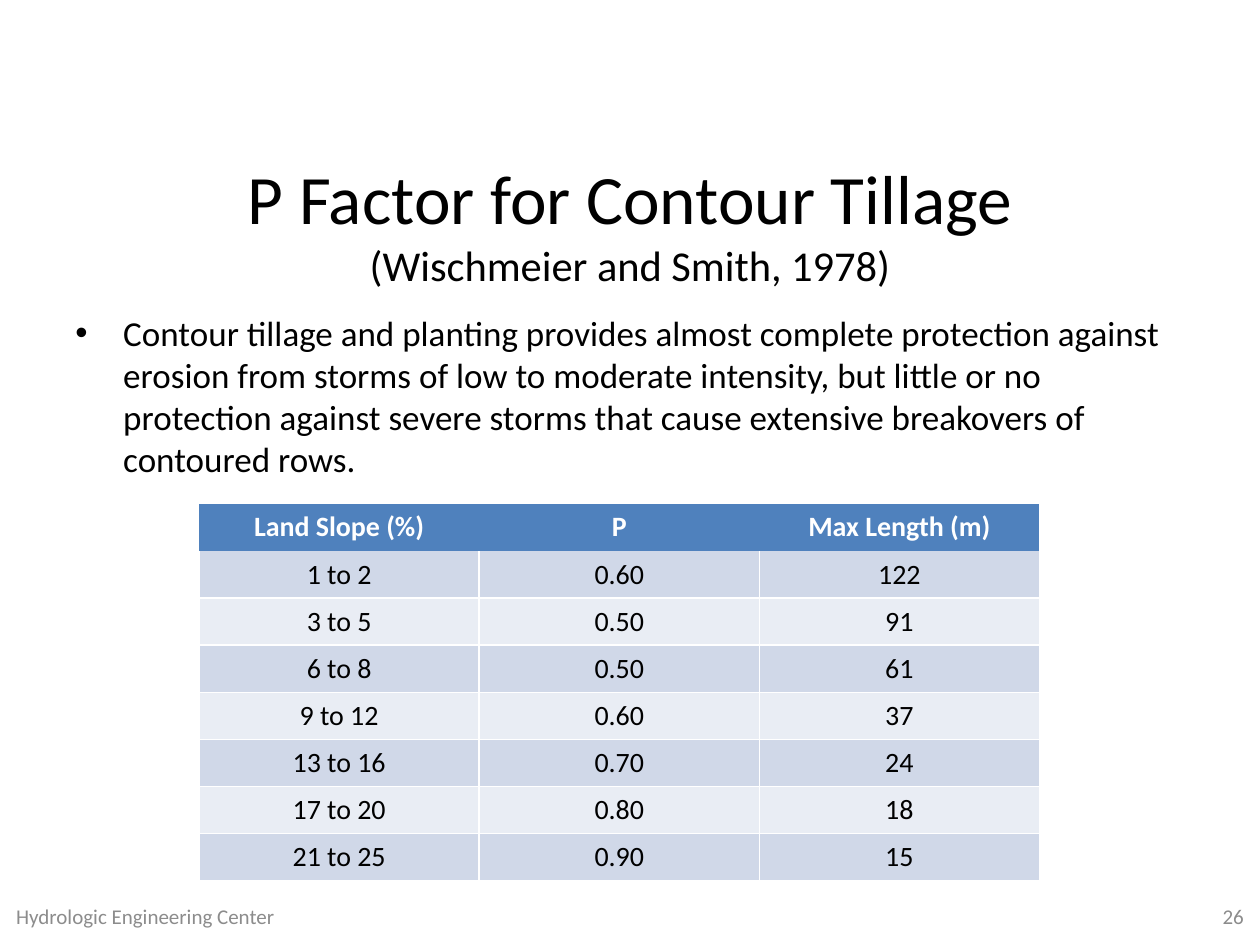
import dataclasses

import lxml.etree
import pptx
import pptx.dml.color
import pptx.enum.text
import pptx.oxml.ns
import pptx.util

ALIGN = pptx.enum.text.PP_ALIGN
ANCHOR = pptx.enum.text.MSO_ANCHOR
WIDTH, HEIGHT = 10, 7.5
MARGIN = 0.05 * WIDTH
FOOTER_EDGE, FOOTER_TOP, FOOTER_HEIGHT = 0.03, 7.07, 0.4
TABLE_LEFT, TABLE_TOP, TABLE_WIDTH, TABLE_HEIGHT = 1.58, 4, 6.67, 2.99

HEADER = ("Land Slope (%)", "P", "Max Length (m)")
FACTORS = (
    ("1 to 2", "0.60", "122"),
    ("3 to 5", "0.50", "91"),
    ("6 to 8", "0.50", "61"),
    ("9 to 12", "0.60", "37"),
    ("13 to 16", "0.70", "24"),
    ("17 to 20", "0.80", "18"),
    ("21 to 25", "0.90", "15"),
)
ADVICE = (
    "Contour tillage and planting provides almost complete protection against "
    "erosion from storms of low to moderate intensity, but little or no "
    "protection against severe storms that cause extensive breakovers of "
    "contoured rows."
)


@dataclasses.dataclass(frozen=True)
class Theme:
    font: str = "Calibri"
    text: str = "000000"
    muted: str = "8C8C8C"
    white: str = "FFFFFF"
    header: str = "4F81BD"
    bands: tuple = ("D0D8E8", "E9EDF4")
    title_size: float = 39.6
    citation_size: float = 24.3
    body_size: float = 20
    table_size: float = 16
    footer_size: float = 12


THEME = Theme()


def rgb(color):
    return pptx.dml.color.RGBColor.from_string(color)


def style_paragraph(paragraph, color, size=None, align=ALIGN.LEFT, bold=False):
    paragraph.alignment = align
    font = paragraph.font
    font.name = THEME.font
    font.bold = bold
    font.color.rgb = rgb(color)
    if size:
        font.size = pptx.util.Pt(size)


def add_text_box(slide, left, top, width, height, anchor=ANCHOR.MIDDLE):
    """Add a wrapping text box and return its first paragraph."""
    box = slide.shapes.add_textbox(*map(pptx.util.Inches, (left, top, width, height)))
    frame = box.text_frame
    frame.word_wrap = True
    frame.vertical_anchor = anchor
    return frame.paragraphs[0]


def add_title(slide):
    paragraph = add_text_box(slide, MARGIN, 1.14, WIDTH - 2 * MARGIN, 1.25)
    style_paragraph(paragraph, THEME.text, align=ALIGN.CENTER)
    title = paragraph.add_run()
    title.text = "P Factor for Contour Tillage"
    title.font.size = pptx.util.Pt(THEME.title_size)
    paragraph.add_line_break()
    citation = paragraph.add_run()
    citation.text = "(Wischmeier and Smith, 1978)"
    citation.font.size = pptx.util.Pt(THEME.citation_size)


def add_bullet_text(slide):
    paragraph = add_text_box(slide, MARGIN, 2.42, WIDTH - 2 * MARGIN, 4.5, ANCHOR.TOP)
    paragraph.text = ADVICE
    properties = paragraph._p.get_or_add_pPr()
    indent = pptx.util.Inches(0.38)
    properties.set("marL", str(indent))
    properties.set("indent", str(-indent))
    bullet_font = lxml.etree.SubElement(properties, pptx.oxml.ns.qn("a:buFont"))
    bullet_font.set("typeface", "Arial")
    bullet = lxml.etree.SubElement(properties, pptx.oxml.ns.qn("a:buChar"))
    bullet.set("char", "•")
    style_paragraph(paragraph, THEME.text, THEME.body_size)


def set_borders(cell, visible_sides):
    """Draw white lines on the given sides and clear the others."""
    properties = cell._tc.get_or_add_tcPr()
    for side in "LRTB":
        line = lxml.etree.SubElement(properties, pptx.oxml.ns.qn(f"a:ln{side}"))
        line.set("w", str(pptx.util.Pt(1)))
        if side in visible_sides:
            fill = lxml.etree.SubElement(line, pptx.oxml.ns.qn("a:solidFill"))
            color = lxml.etree.SubElement(fill, pptx.oxml.ns.qn("a:srgbClr"))
            color.set("val", THEME.white)
        else:
            lxml.etree.SubElement(line, pptx.oxml.ns.qn("a:noFill"))


def fill_row(table, row, texts):
    is_header = row == 0
    background = THEME.header if is_header else THEME.bands[(row - 1) % 2]
    sides = "" if is_header else "LRB" if row == 1 else "LRTB"
    for column, text in enumerate(texts):
        cell = table.cell(row, column)
        set_borders(cell, sides)
        cell.fill.solid()
        cell.fill.fore_color.rgb = rgb(background)
        cell.text = text
        style_paragraph(
            cell.text_frame.paragraphs[0],
            THEME.white if is_header else THEME.text,
            THEME.table_size,
            ALIGN.CENTER,
            is_header,
        )


def add_factor_table(slide):
    rows = (HEADER, *FACTORS)
    area = map(pptx.util.Inches, (TABLE_LEFT, TABLE_TOP, TABLE_WIDTH, TABLE_HEIGHT))
    table = slide.shapes.add_table(len(rows), len(HEADER), *area).table
    for row, texts in enumerate(rows):
        fill_row(table, row, texts)


def add_footer(slide, text, left, width, align):
    paragraph = add_text_box(slide, left, FOOTER_TOP, width, FOOTER_HEIGHT)
    paragraph.text = text
    style_paragraph(paragraph, THEME.muted, THEME.footer_size, align)


def main():
    presentation = pptx.Presentation()
    presentation.slide_width = pptx.util.Inches(WIDTH)
    presentation.slide_height = pptx.util.Inches(HEIGHT)
    slide = presentation.slides.add_slide(presentation.slide_layouts[6])
    add_title(slide)
    add_bullet_text(slide)
    add_footer(slide, "Hydrologic Engineering Center", FOOTER_EDGE, 3.17, ALIGN.LEFT)
    number_width = 2.33
    number_left = WIDTH - FOOTER_EDGE - number_width
    add_footer(slide, "26", number_left, number_width, ALIGN.RIGHT)
    add_factor_table(slide)
    presentation.save("out.pptx")


if __name__ == "__main__":
    main()
